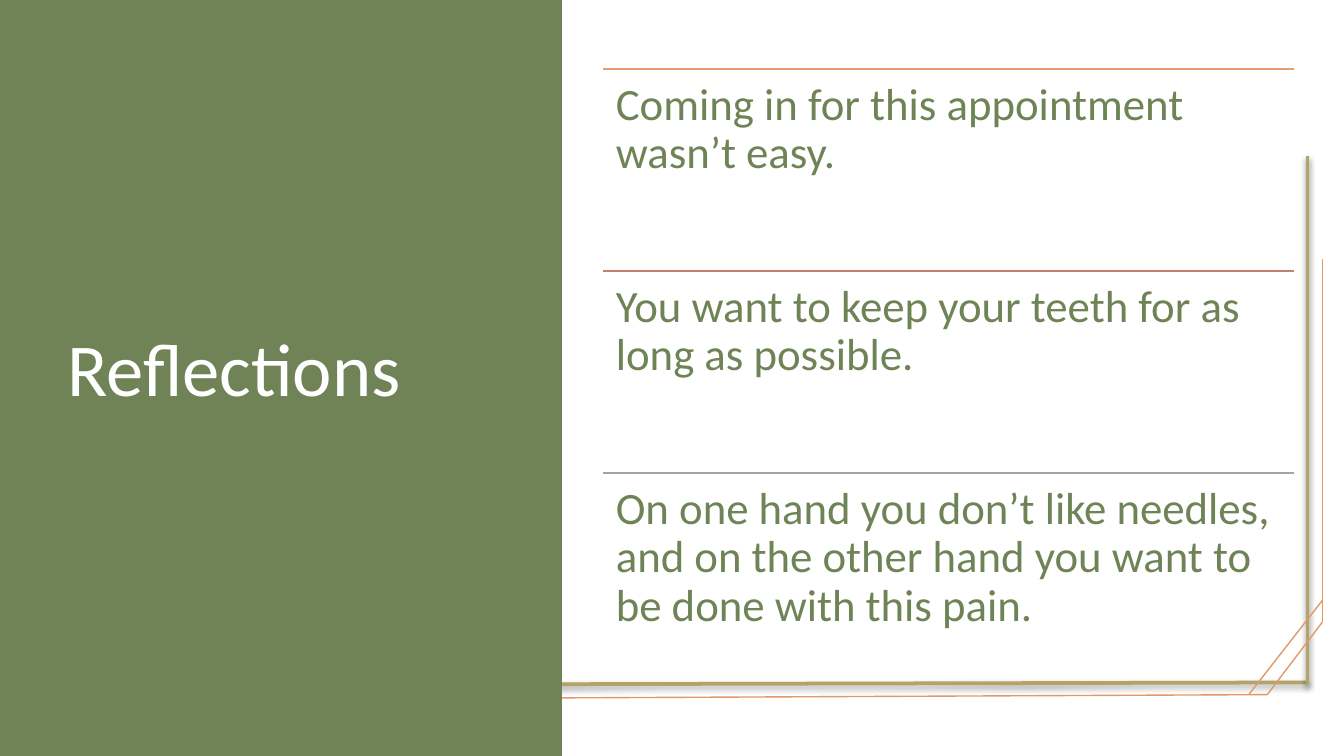
from typing import NamedTuple

from lxml.etree import SubElement as Sub
from pptx import Presentation
from pptx.dml.color import RGBColor
from pptx.enum.shapes import MSO_CONNECTOR as Link, MSO_SHAPE as Form
from pptx.enum.text import MSO_ANCHOR as Anchor, MSO_AUTO_SIZE as Fit, PP_ALIGN as Align
from pptx.oxml.ns import qn
from pptx.util import Cm, Pt

GREEN = RGBColor(0x6F, 0x83, 0x56)
MOSS = RGBColor(0x6F, 0x84, 0x56)
GOLD = RGBColor(0xB3, 0xA3, 0x69)
PEACH = RGBColor(0xE1, 0x99, 0x67)
AMBER = RGBColor(0xE5, 0x9E, 0x6D)
RUST = RGBColor(0xC4, 0x7F, 0x6E)
GRAY = RGBColor(0xA4, 0xA4, 0xA4)
WHITE = RGBColor(0xFF, 0xFF, 0xFF)

LEFT, TOP, WIDE, STEP = 11.4, 1.3, 13.05, 3.82


class Rule(NamedTuple):
    x1: float
    y1: float
    x2: float
    y2: float
    color: RGBColor
    weight: float
    shade: bool = False


class Item(NamedTuple):
    text: str
    color: RGBColor


RULES = [
    Rule(3.17, 12.95, 24.71, 12.9, GOLD, 2, True),
    Rule(24.71, 2.95, 24.71, 12.95, GOLD, 2, True),
    Rule(24.99, 11.76, 23.95, 13.13, PEACH, 0.75),
    Rule(24.99, 11.35, 23.6, 13.13, PEACH, 0.75),
    Rule(23.95, 13.13, 6.53, 13.21, PEACH, 0.75),
    Rule(24.99, 11.76, 24.99, 4.9, PEACH, 0.75),
]

ITEMS = [
    Item("Coming in for this appointment wasn’t easy.", AMBER),
    Item("You want to keep your teeth for as long as possible.", RUST),
    Item("On one hand you don’t like needles, and on the other hand "
         "you want to be done with this pain.", GRAY),
]


def draw_rule(shapes, rule: Rule) -> None:
    ends = [Cm(n) for n in rule[:4]]
    line = shapes.add_connector(Link.STRAIGHT, *ends)
    line.line.color.rgb = rule.color
    line.line.width = Pt(rule.weight)
    glow = Sub(line._element.spPr, qn("a:effectLst"))
    if rule.shade:
        drop = Sub(glow, qn("a:outerShdw"), blurRad=str(Pt(3.1)),
                   dist=str(Pt(1.6)), dir="5400000", rotWithShape="0")
        tint = Sub(drop, qn("a:srgbClr"), val="000000")
        Sub(tint, qn("a:alpha"), val="38000")


def set_all(thing, look: dict) -> None:
    for name, value in look.items():
        setattr(thing, name, value)


def write(shape, text: str, size: float, color: RGBColor,
          anchor: Anchor, side: float, edge: float) -> None:
    frame = shape.text_frame
    frame.text = text
    set_all(frame, {
        "word_wrap": True, "auto_size": Fit.NONE, "vertical_anchor": anchor,
        "margin_left": Cm(side), "margin_right": Cm(side),
        "margin_top": Cm(edge), "margin_bottom": Cm(edge),
    })
    para = frame.paragraphs[0]
    set_all(para, {"alignment": Align.LEFT, "line_spacing": 0.9,
                   "space_before": Pt(0)})
    font = para.runs[0].font
    set_all(font, {"name": "Calibri", "size": Pt(size)})
    font.color.rgb = color


def draw_item(shapes, item: Item, y: float) -> None:
    draw_rule(shapes, Rule(LEFT, y, LEFT + WIDE, y, item.color, 1))
    box = shapes.add_textbox(Cm(LEFT), Cm(y), Cm(WIDE), Cm(STEP))
    write(box, item.text, 24, MOSS, Anchor.TOP, 0.24, 0.24)


def main() -> None:
    deck = Presentation()
    set_all(deck, {"slide_width": Cm(25.4), "slide_height": Cm(14.29)})
    slide = deck.slides.add_slide(deck.slide_layouts[5])
    shapes = slide.shapes

    for rule in RULES:
        draw_rule(shapes, rule)

    panel = shapes.add_shape(Form.RECTANGLE, 0, 0, Cm(10.62), deck.slide_height)
    panel.shadow.inherit = False
    panel.fill.solid()
    panel.fill.fore_color.rgb = GREEN
    panel.line.fill.background()

    title = shapes.title
    set_all(title, {"left": Cm(1.09), "top": Cm(1.3),
                    "width": Cm(7.92), "height": Cm(11.48)})
    write(title, "Reflections", 40, WHITE, Anchor.MIDDLE, 0.19, 0.1)
    panel._element.addnext(title._element)

    for i, item in enumerate(ITEMS):
        draw_item(shapes, item, TOP + i * STEP)

    deck.save("out.pptx")


if __name__ == "__main__":
    main()
